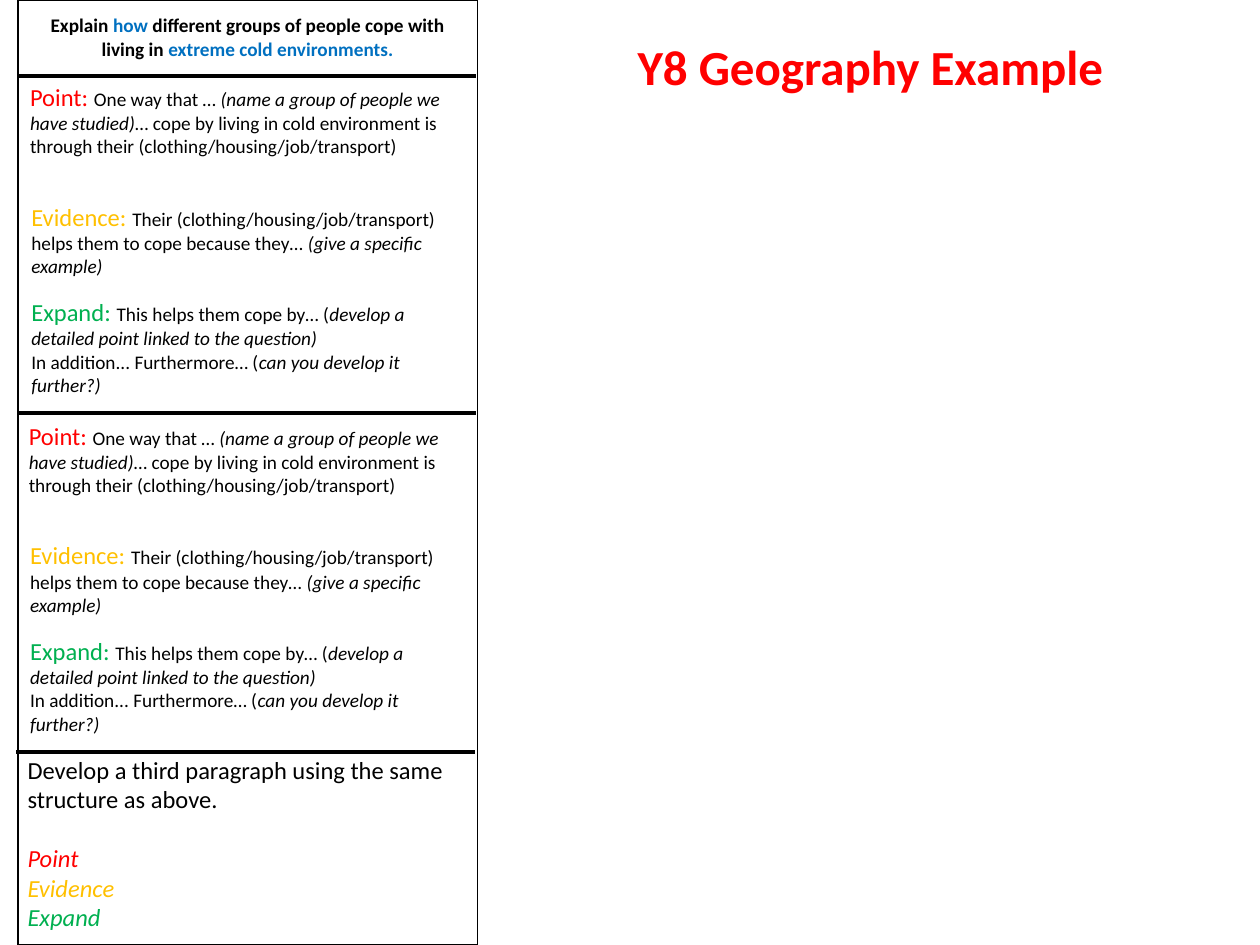
from lxml import etree
from pptx import Presentation
from pptx.dml.color import RGBColor
from pptx.enum.shapes import MSO_CONNECTOR, MSO_SHAPE
from pptx.enum.text import MSO_ANCHOR, MSO_AUTO_SIZE, PP_ALIGN
from pptx.oxml.ns import qn
from pptx.util import Inches, Pt

RECTANGLE = MSO_SHAPE.RECTANGLE
STRAIGHT = MSO_CONNECTOR.STRAIGHT
TOP = MSO_ANCHOR.TOP
NO_AUTOFIT, GROW = MSO_AUTO_SIZE.NONE, MSO_AUTO_SIZE.SHAPE_TO_FIT_TEXT
LEFT, CENTER = PP_ALIGN.LEFT, PP_ALIGN.CENTER

FONT = "Calibri"
BLACK, BLUE = "000000", "0070C0"
RED, AMBER, GREEN = "FF0000", "FFC000", "00B050"
BODY_SIZE, LABEL_SIZE, TITLE_SIZE = 11, 14, 28
PANEL_LEFT, PANEL_WIDTH = 0.14, 3.65


def color(hex_code):
    return RGBColor.from_string(hex_code)


def run(text, ink=BLACK, size=BODY_SIZE, bold=False, italic=False):
    return text, ink, size, bold, italic


def add_runs(paragraph, runs):
    for text, ink, size, bold, italic in runs:
        part = paragraph.add_run()
        part.text = text
        part.font.name = FONT
        part.font.size = Pt(size)
        part.font.bold = bold
        part.font.italic = italic
        part.font.color.rgb = color(ink)


def add_text(slide, left, top, height, paragraphs, align=LEFT):
    """Add a panel-wide text box; return its paragraphs."""
    box = slide.shapes.add_textbox(
        Inches(left), Inches(top), Inches(PANEL_WIDTH), Inches(height))
    frame = box.text_frame
    frame.word_wrap = True
    frame.auto_size = GROW
    for index, runs in enumerate(paragraphs):
        paragraph = frame.add_paragraph() if index else frame.paragraphs[0]
        paragraph.alignment = align
        add_runs(paragraph, runs)
    return frame.paragraphs


def add_panel(slide):
    panel = slide.shapes.add_shape(
        RECTANGLE, Inches(PANEL_LEFT), 0, Inches(PANEL_WIDTH), Inches(7.5))
    panel.shadow.inherit = False
    panel.fill.background()
    panel.line.color.rgb = color(BLACK)
    panel.line.width = Pt(1)


def add_divider(slide, left, y):
    divider = slide.shapes.add_connector(
        STRAIGHT, Inches(left), Inches(y), Inches(left + 3.64), Inches(y))
    divider.line.color.rgb = color(BLACK)
    divider.line.width = Pt(2.25)
    etree.SubElement(divider._element.spPr, qn("a:effectLst"))


def add_title(slide):
    title = slide.shapes.title
    title.left, title.top = Inches(4.96), Inches(0.24)
    title.width, title.height = Inches(4.35), Inches(0.57)
    frame = title.text_frame
    frame.auto_size = NO_AUTOFIT
    frame.vertical_anchor = TOP
    frame.paragraphs[0].alignment = LEFT
    add_runs(frame.paragraphs[0],
             [run("Y8 Geography Example", RED, TITLE_SIZE, bold=True)])


def add_question(slide):
    add_text(slide, PANEL_LEFT, 0.06, 0.47, [[
        run("Explain ", bold=True),
        run("how", BLUE, bold=True),
        run(" different groups of people cope with living in ", bold=True),
        run("extreme cold environments.", BLUE, bold=True),
    ]], CENTER)


def add_scaffold(slide, left, top):
    """Add one Point, Evidence, Expand paragraph guide."""
    add_text(slide, left, top, 1.08, [[
        run("Point: ", RED, LABEL_SIZE),
        run("One way that … "),
        run("(name a group of people we have studied)", italic=True),
        run("… cope by living in cold environment is through their "
            "(clothing/housing/job/transport)"),
    ]])
    add_text(slide, left + 0.01, top + 0.95, 0.89, [[
        run("Evidence: ", AMBER, LABEL_SIZE),
        run("Their (clothing/housing/job/transport) helps them to cope "
            "because they… "),
        run("(give a specific example)", italic=True),
    ]])
    add_text(slide, left + 0.01, top + 1.71, 0.89, [
        [run("Expand: ", GREEN, LABEL_SIZE),
         run("This helps them cope by… ("),
         run("develop a detailed point linked to the question)", italic=True)],
        [run("In addition... Furthermore… ("),
         run("can you develop it further?)", italic=True)],
    ])


def add_third_task(slide):
    steps = [("Point", RED), ("Evidence", AMBER), ("Expand", GREEN)]
    instruction = run(
        "Develop a third paragraph using the same structure as above.",
        size=LABEL_SIZE)
    paragraphs = add_text(
        slide, 0.12, 5.94, 1.51,
        [[instruction]] + [[run(step, ink, LABEL_SIZE, italic=True)]
                           for step, ink in steps])
    paragraphs[1].space_before = Pt(17)


def main():
    deck = Presentation()
    deck.slide_width, deck.slide_height = Inches(10), Inches(7.5)
    slide = deck.slides.add_slide(deck.slide_layouts[5])
    add_title(slide)
    add_panel(slide)
    add_question(slide)
    for left, top in [(0.14, 0.6), (0.13, 3.29)]:
        add_scaffold(slide, left, top)
    for left, y in [(0.14, 0.6), (0.14, 3.28), (0.13, 5.97)]:
        add_divider(slide, left, y)
    add_third_task(slide)
    deck.save("out.pptx")


if __name__ == "__main__":
    main()
